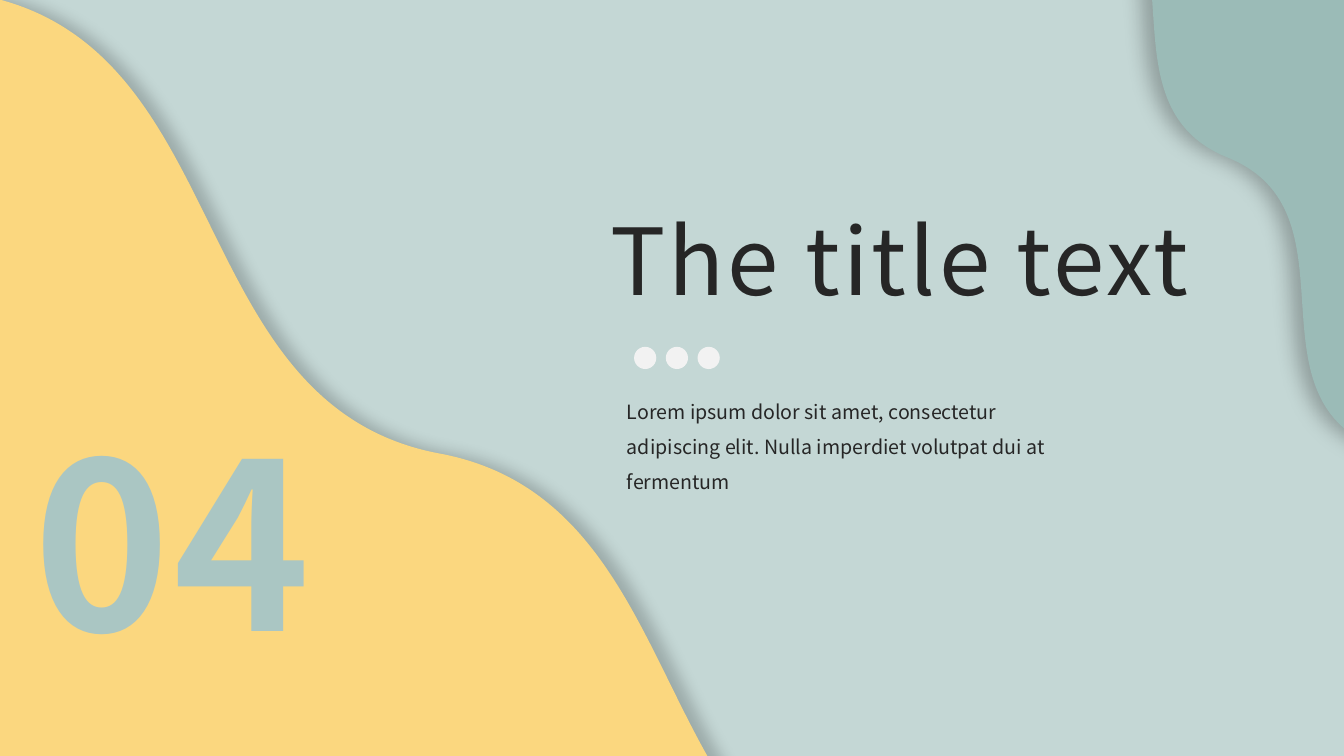
from lxml.etree import SubElement
from pptx import Presentation
from pptx.dml.color import RGBColor
from pptx.enum.shapes import MSO_SHAPE as SHAPE
from pptx.enum.text import MSO_ANCHOR as ANCHOR, MSO_AUTO_SIZE as AUTO, PP_ALIGN as ALIGN
from pptx.oxml.ns import qn
from pptx.util import Cm, Pt

FONT = "Noto Sans CJK SC"
INK = "262626"
LOREM = ("Lorem ipsum dolor sit amet, consectetur adipiscing elit. "
         "Nulla imperdiet volutpat dui at fermentum")


def color(value):
    return RGBColor.from_string(value)


def place(sp, box):
    sp.left, sp.top, sp.width, sp.height = [Cm(v) for v in box]


def add_filled(shapes, kind, box, fill):
    sp = shapes.add_shape(kind, *[Cm(v) for v in box])
    sp.shadow.inherit = False
    sp.fill.solid()
    sp.fill.fore_color.rgb = color(fill)
    sp.line.fill.background()
    return sp


def write(sp, text, size, ink, bold=False, spacing=0, align=ALIGN.LEFT, inset=(0.25, 0.13)):
    tf = sp.text_frame
    tf.word_wrap = True
    tf.auto_size = AUTO.SHAPE_TO_FIT_TEXT
    tf.vertical_anchor = ANCHOR.TOP
    tf.margin_left = tf.margin_right = Cm(inset[0])
    tf.margin_top = tf.margin_bottom = Cm(inset[1])
    p = tf.paragraphs[0]
    p.alignment = align
    r = p.add_run()
    r.text = text
    r.font.size = Pt(size)
    r.font.bold = bold
    r.font.name = FONT
    r.font.color.rgb = color(ink)
    rpr = r.font._element
    SubElement(rpr, qn("a:ea")).set("typeface", FONT)
    if spacing:
        rpr.set("spc", str(int(spacing * 100)))
    return p


def add_wave(s, box, angle, adjust, fill, opacity, blur, distance, direction):
    sp = add_filled(s.shapes, SHAPE.DOUBLE_WAVE, box, fill)
    sp.rotation = angle
    for i, value in enumerate(adjust):
        sp.adjustments[i] = value
    effects = sp._element.spPr.find(qn("a:effectLst"))
    shadow = SubElement(effects, qn("a:outerShdw"), blurRad=str(Pt(blur)), dist=str(Pt(distance)),
                        dir=str(direction * 60000), rotWithShape="0")
    tint = SubElement(shadow, qn("a:srgbClr"), val="000000")
    SubElement(tint, qn("a:alpha"), val=str(opacity * 1000))


def add_dots(s, left, top, size=0.56, pitch=0.8, count=3):
    group = s.shapes.add_group_shape()
    for i in range(count):
        add_filled(group.shapes, SHAPE.OVAL, (left + i * pitch, top, size, size), "F2F2F2")


def add_heading(s, left, top):
    title = s.shapes.title
    place(title, (left, top, 15.6, 3.02))
    write(title, "The title text", 66, INK, spacing=2.2, align=ALIGN.CENTER, inset=(0.18, 0.1))
    add_dots(s, left + 1.1, top + 3.71)
    body = s.shapes.add_textbox(Cm(left + 0.67), Cm(top + 4.62), Cm(12.22), Cm(2.84))
    p = write(body, LOREM, 14, INK)
    p.line_spacing = 1.5
    p.space_before = Pt(12)


def add_number(s, box):
    sp = s.shapes.add_textbox(*[Cm(v) for v in box])
    write(sp, "04", 166, "AAC6C3", True, 2.2, ALIGN.CENTER, (0.18, 0.1))


def build_section(prs):
    s = prs.slides.add_slide(prs.slide_layouts[5])
    s.background.fill.solid()
    s.background.fill.fore_color.rgb = color("C4D7D5")
    add_heading(s, 14.88, 5.03)
    add_wave(s, (-12.24, 7.44, 34.9, 16.69), 44.9, (0.067, -0.031), "FBD77F", 20, 11, 9, 0)
    add_number(s, (-0.46, 9.96, 9.6, 7.29))
    add_wave(s, (25.07, -0.61, 18.24, 7.82), 242.8, (0.091, -0.049), "9BBBB7", 25, 14, 8, 180)


def main():
    prs = Presentation()
    prs.slide_width, prs.slide_height = Cm(33.87), Cm(19.05)
    build_section(prs)
    prs.save("out.pptx")


if __name__ == "__main__":
    main()
